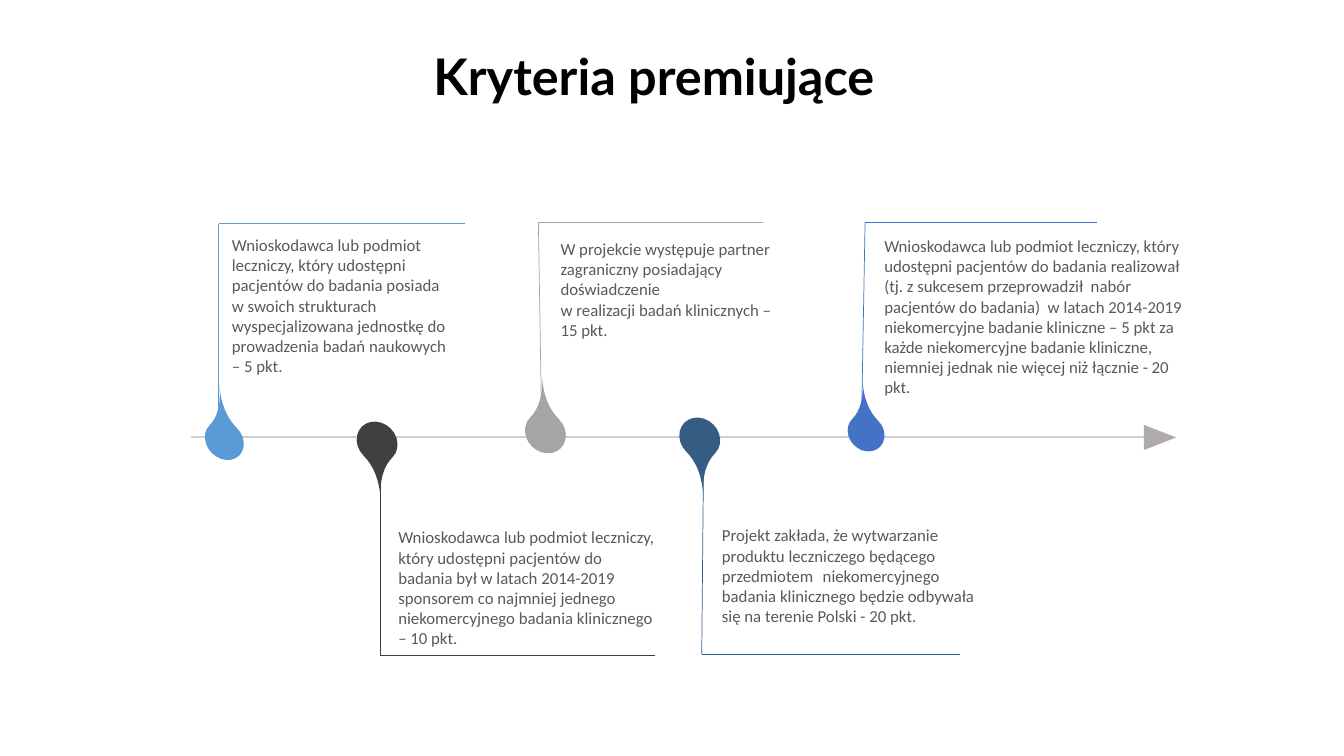
"""Builds the "Kryteria premiujące" slide: a timeline with five scoring criteria."""
import dataclasses

import pptx
import pptx.dml.color
import pptx.enum.shapes
import pptx.enum.text
import pptx.oxml.ns
import pptx.util
from lxml import etree

Inches = pptx.util.Inches
RGB = pptx.dml.color.RGBColor.from_string
SHAPE = pptx.enum.shapes.MSO_SHAPE
ANCHOR = pptx.enum.text.MSO_ANCHOR


@dataclasses.dataclass(frozen=True)
class Theme:
    title: str = "000000"
    body: str = "595959"
    axis: str = "D0CECE"
    arrow: str = "AFABAB"
    blue: str = "5B9BD5"
    dark: str = "404040"
    gray: str = "A5A5A5"
    navy: str = "355D84"
    royal: str = "4472C4"
    title_font: str = "Lato"
    body_font: str = "Calibri"
    title_size: int = 36
    body_size: int = 12
    axis_width: float = 1.5
    stem_width: float = 0.5


theme = Theme()

prs = pptx.Presentation()
prs.slide_width, prs.slide_height = Inches(13.33), Inches(7.5)
s = prs.slides.add_slide(prs.slide_layouts[6])


def add_line(start, end, color, width):
    line = s.shapes.add_connector(
        pptx.enum.shapes.MSO_CONNECTOR.STRAIGHT, *map(Inches, start + end))
    line.line.color.rgb = RGB(color)
    line.line.width = pptx.util.Pt(width)
    etree.SubElement(line._element.spPr, pptx.oxml.ns.qn("a:effectLst"))


def add_solid(kind, box, rotation, color):
    sp = s.shapes.add_shape(kind, *map(Inches, box))
    sp.rotation = rotation
    sp.shadow.inherit = False
    sp.fill.solid()
    sp.fill.fore_color.rgb = RGB(color)
    sp.line.fill.background()
    return sp


add_line((1.89, 4.34), (11.57, 4.34), theme.axis, theme.axis_width)
add_solid(SHAPE.ISOSCELES_TRIANGLE, (11.38, 4.18, 0.25, 0.32), 90, theme.arrow)

UP, DOWN = 315, 135
# color, drop direction, drop box, stem start, stem corner, rule end x, text box, text
criteria = [
    (theme.blue, UP, (2.05, 4.16, 0.35, 0.42), (2.17, 4.32), (2.17, 2.22), 4.61,
     (2.3, 2.28, 2.18, 1.51),
     "Wnioskodawca lub podmiot leczniczy, który udostępni pacjentów do badania "
     "posiada w swoich strukturach wyspecjalizowana jednostkę do prowadzenia "
     "badań naukowych – 5 pkt."),
    (theme.dark, DOWN, (3.55, 4.17, 0.38, 0.43), (3.77, 4.34), (3.77, 6.5), 6.5,
     (3.95, 5.18, 2.55, 1.31),
     "Wnioskodawca lub podmiot leczniczy, który udostępni pacjentów do badania "
     "był w latach 2014-2019 sponsorem co najmniej jednego niekomercyjnego "
     "badania klinicznego – 10 pkt."),
    (theme.gray, UP, (5.22, 4.08, 0.38, 0.43), (5.37, 4.06), (5.34, 2.21), 7.57,
     (5.56, 2.32, 2.14, 1.11),
     "W projekcie występuje partner zagraniczny posiadający doświadczenie \v"
     "w realizacji badań klinicznych – 15 pkt."),
    (theme.navy, DOWN, (6.75, 4.13, 0.38, 0.43), (6.98, 4.32), (6.96, 6.49), 9.52,
     (7.16, 5.16, 2.72, 1.11),
     "Projekt zakłada, że wytwarzanie produktu leczniczego będącego "
     "przedmiotem \tniekomercyjnego badania klinicznego będzie odbywała się "
     "na terenie Polski - 20 pkt."),
    (theme.royal, UP, (8.42, 4.1, 0.34, 0.39), (8.54, 4.47), (8.58, 2.21), 10.88,
     (8.77, 2.29, 2.99, 1.72),
     "Wnioskodawca lub podmiot leczniczy, który udostępni pacjentów do badania "
     "realizował (tj. z sukcesem przeprowadził  nabór pacjentów do badania)  "
     "w latach 2014-2019 niekomercyjne badanie kliniczne – 5 pkt za każde "
     "niekomercyjne badanie kliniczne, niemniej jednak nie więcej niż łącznie "
     "- 20 pkt."),
]

texts = [((4.2, 0.06, 4.96, 1.45), "Kryteria premiujące", True)]
for color, direction, drop_box, stem, corner, rule_end, text_box, text in criteria:
    drop = add_solid(SHAPE.TEAR, drop_box, direction, color)
    drop.adjustments[0] = 2
    add_line(stem, corner, color, theme.stem_width)
    add_line(corner, (rule_end, corner[1]), color, theme.stem_width)
    texts.append((text_box, text, False))

for box, text, is_title in texts:
    tf = s.shapes.add_textbox(*map(Inches, box)).text_frame
    tf.word_wrap = True
    tf.vertical_anchor = ANCHOR.MIDDLE if is_title else ANCHOR.TOP
    tf.margin_left = tf.margin_right = Inches(0.1 if is_title else 0)
    p = tf.paragraphs[0]
    p.text = text
    p.line_spacing = 0.9 if is_title else 1.0
    for r in p.runs:
        r.font.name = theme.title_font if is_title else theme.body_font
        r.font.size = pptx.util.Pt(theme.title_size if is_title else theme.body_size)
        r.font.bold = is_title
        r.font.color.rgb = RGB(theme.title if is_title else theme.body)

prs.save("out.pptx")
